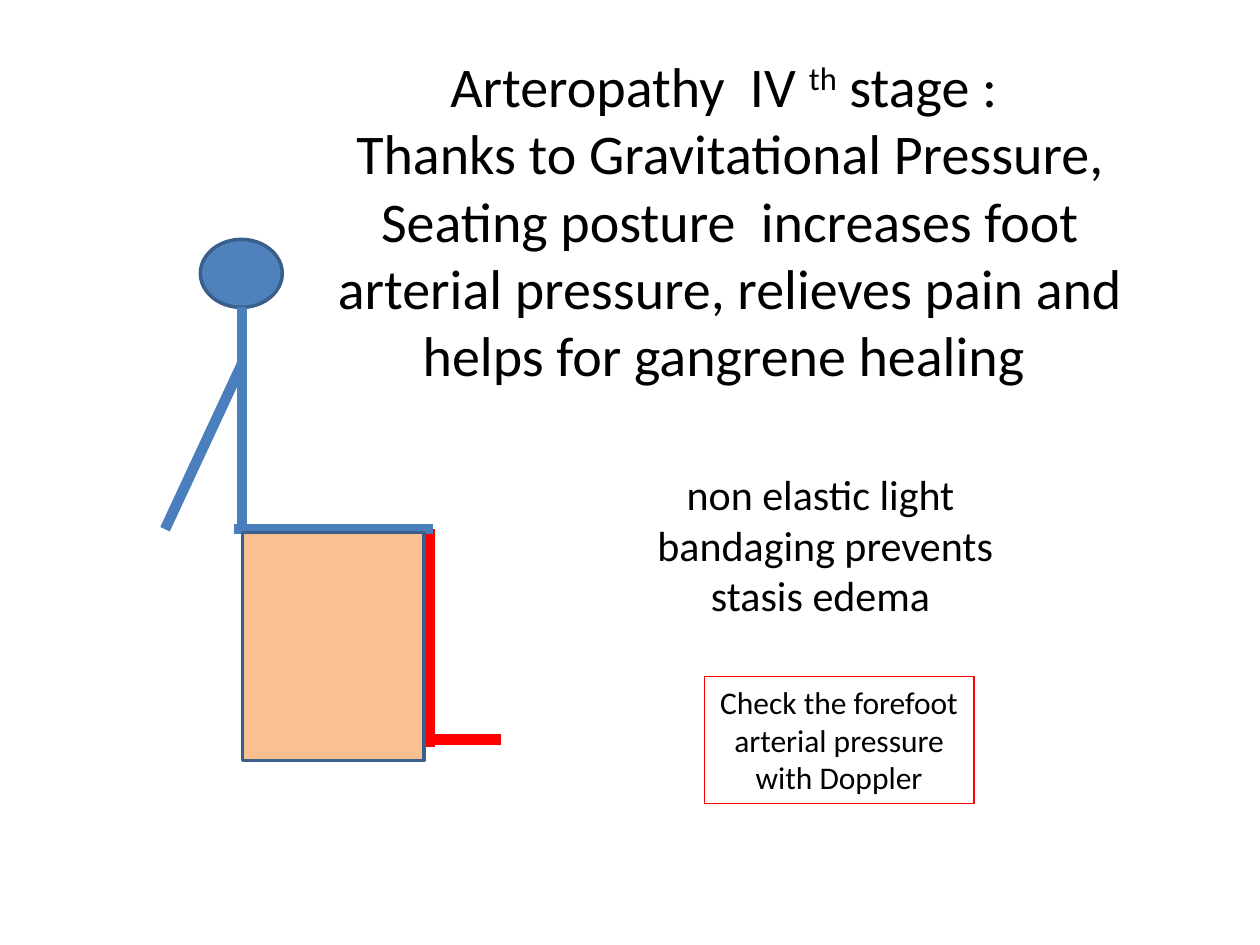
"""Build a slide on seated posture and foot arterial pressure."""
from dataclasses import dataclass

from pptx import Presentation
from pptx.dml.color import RGBColor
from pptx.enum.shapes import MSO_CONNECTOR, MSO_SHAPE
from pptx.enum.text import MSO_ANCHOR, MSO_AUTO_SIZE, PP_ALIGN
from pptx.oxml.ns import qn
from pptx.util import Inches, Pt

BLACK = RGBColor(0x00, 0x00, 0x00)
RED = RGBColor(0xFF, 0x00, 0x00)
BODY_BLUE = RGBColor(0x4B, 0x7E, 0xBC)
HEAD_BLUE = RGBColor(0x4F, 0x81, 0xBD)
OUTLINE_BLUE = RGBColor(0x3A, 0x5F, 0x8C)
SEAT_ORANGE = RGBColor(0xFA, 0xC0, 0x90)

NECK_X, NECK_Y = 1.92, 2.44
SHOULDER_Y = 2.89
HIP_Y = 4.2
KNEE_X = 3.41
FOOT_Y = 5.87


@dataclass(frozen=True)
class Box:
    left: float
    top: float
    width: float
    height: float

    def lengths(self) -> tuple:
        return tuple(Inches(value) for value in (self.left, self.top, self.width, self.height))


@dataclass(frozen=True)
class Limb:
    start: tuple[float, float]
    end: tuple[float, float]
    color: RGBColor


TORSO = Limb((NECK_X, NECK_Y), (NECK_X, HIP_Y), BODY_BLUE)
LOWER_LEG = Limb((KNEE_X, HIP_Y), (KNEE_X, 5.93), RED)
THIGH = Limb((1.86, HIP_Y), (3.44, HIP_Y), BODY_BLUE)
ARM = Limb((NECK_X, SHOULDER_Y), (1.31, HIP_Y), BODY_BLUE)
FOOT = Limb((3.36, FOOT_Y), (3.98, FOOT_Y), RED)


def draw_limb(slide, limb: Limb) -> None:
    ends = [Inches(value) for value in (*limb.start, *limb.end)]
    connector = slide.shapes.add_connector(MSO_CONNECTOR.STRAIGHT, *ends)
    connector.line.color.rgb = limb.color
    connector.line.width = Pt(6)
    properties = connector._element.spPr
    properties.append(properties.makeelement(qn("a:effectLst"), {}))


def draw_solid(slide, kind: MSO_SHAPE, box: Box, fill: RGBColor, rotation: float = 0) -> None:
    shape = slide.shapes.add_shape(kind, *box.lengths())
    shape.rotation = rotation
    shape.shadow.inherit = False
    shape.fill.solid()
    shape.fill.fore_color.rgb = fill
    shape.line.color.rgb = OUTLINE_BLUE
    shape.line.width = Pt(2)


def add_run(paragraph, text: str, *, size: float, superscript: bool = False) -> None:
    run = paragraph.add_run()
    run.text = text
    run.font.name = "Calibri"
    run.font.size = Pt(size)
    run.font.color.rgb = BLACK
    if superscript:
        run.font._element.set("baseline", "30000")


def prepare_frame(shape):
    frame = shape.text_frame
    frame.word_wrap = True
    frame.auto_size = MSO_AUTO_SIZE.SHAPE_TO_FIT_TEXT
    frame.vertical_anchor = MSO_ANCHOR.TOP
    frame.paragraphs[0].alignment = PP_ALIGN.CENTER
    return frame


def write_title(slide, box: Box) -> None:
    title = slide.shapes.title
    title.left, title.top, title.width, title.height = box.lengths()
    frame = prepare_frame(title)
    heading = frame.paragraphs[0]
    add_run(heading, "Arteropathy  IV ", size=32)
    add_run(heading, "th", size=32, superscript=True)
    add_run(heading, " stage : ", size=32)
    statement = frame.add_paragraph()
    statement.alignment = PP_ALIGN.CENTER
    add_run(
        statement,
        "Thanks to Gravitational Pressure, Seating posture  increases foot arterial "
        "pressure, relieves pain and helps for gangrene healing ",
        size=32,
    )


def write_note(slide, box: Box, text: str, *, size: float, border: RGBColor | None = None) -> None:
    note = slide.shapes.add_textbox(*box.lengths())
    add_run(prepare_frame(note).paragraphs[0], text, size=size)
    if border is not None:
        note.line.color.rgb = border
        note.line.width = Pt(0.75)


def main() -> None:
    presentation = Presentation()
    presentation.slide_width = Inches(10)
    presentation.slide_height = Inches(7.5)
    slide = presentation.slides.add_slide(presentation.slide_layouts[5])

    write_title(slide, Box(2.57, 0.36, 6.45, 3.33))
    draw_solid(slide, MSO_SHAPE.OVAL, Box(1.59, 1.9, 0.65, 0.54), HEAD_BLUE)
    for limb in (TORSO, LOWER_LEG, THIGH, ARM, FOOT):
        draw_limb(slide, limb)
    draw_solid(slide, MSO_SHAPE.RECTANGLE, Box(1.74, 4.41, 1.81, 1.44), SEAT_ORANGE, rotation=90)
    write_note(
        slide,
        Box(4.76, 3.67, 3.58, 1.31),
        "non elastic light  bandaging prevents stasis edema ",
        size=24,
    )
    write_note(
        slide,
        Box(5.59, 5.37, 2.14, 1.01),
        "Check the forefoot arterial pressure with Doppler",
        size=18,
        border=RED,
    )
    presentation.save("out.pptx")


if __name__ == "__main__":
    main()
